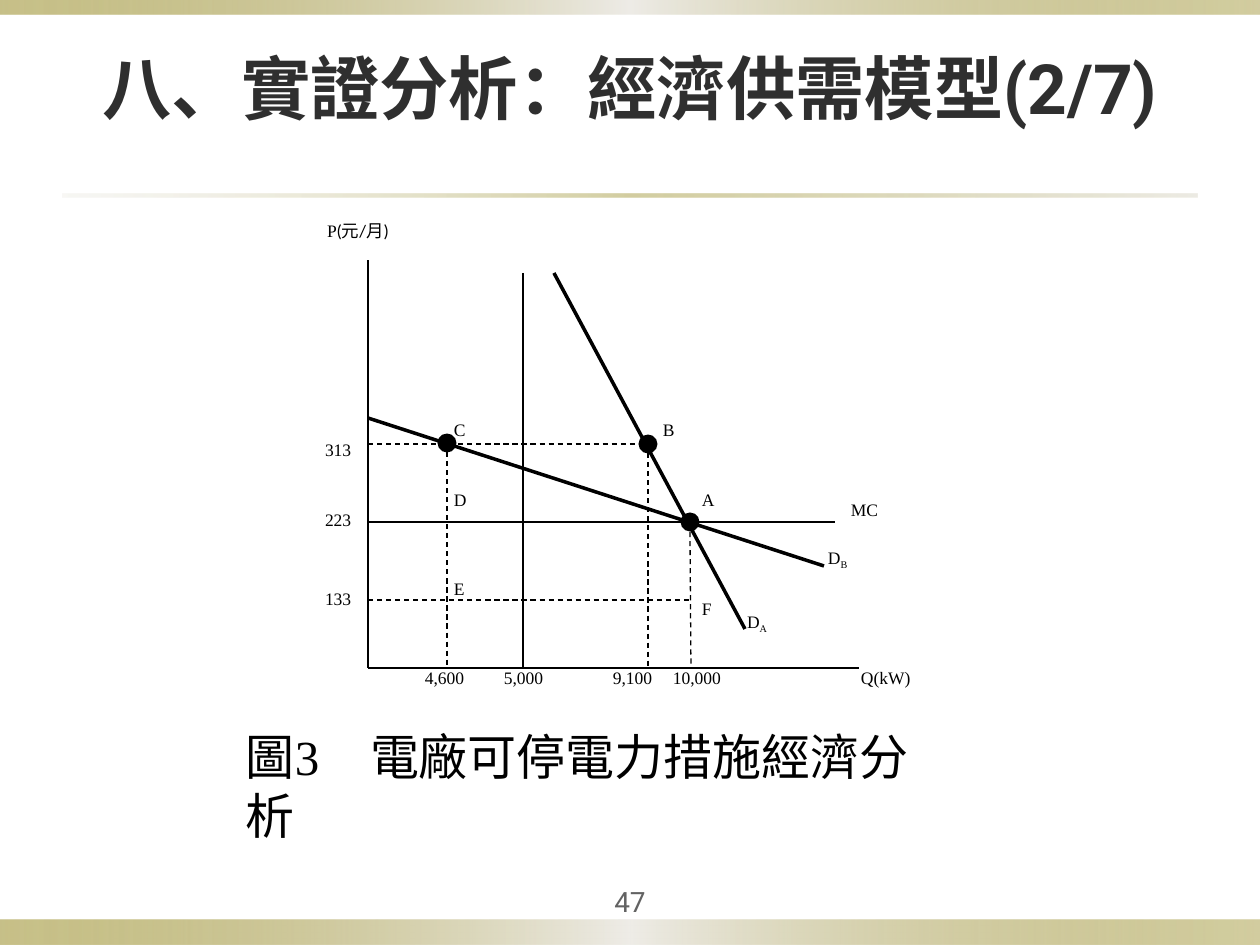
from lxml import etree
from pptx import Presentation
from pptx.dml.color import RGBColor
from pptx.enum.dml import MSO_LINE
from pptx.enum.shapes import MSO_CONNECTOR, MSO_SHAPE
from pptx.enum.text import MSO_ANCHOR, PP_ALIGN
from pptx.oxml.ns import qn
from pptx.util import Pt

STRAIGHT = MSO_CONNECTOR.STRAIGHT
RECTANGLE, OVAL = MSO_SHAPE.RECTANGLE, MSO_SHAPE.OVAL
DASH = MSO_LINE.DASH
LEFT, CENTER = PP_ALIGN.LEFT, PP_ALIGN.CENTER
TOP, MIDDLE = MSO_ANCHOR.TOP, MSO_ANCHOR.MIDDLE

THEME = {
    "ink": "000000", "title": "2F2F2F", "number": "626262",
    "gold": "918415", "silver": "EEECE7", "sand": "DBD8CA",
    "heading_font": "Roboto", "body_font": "Times New Roman",
    "title_size": 39.6, "caption_size": 28, "number_size": 16, "label_size": 10,
    "thin": 0.75, "axis": 1.25, "curve": 2,
}

# Content; all lengths in px, 126 to the inch
SLIDE_SIZE = (1260, 945)
TITLE = "八、實證分析：經濟供需模型(2/7)"
CAPTION = "圖3\t電廠可停電力措施經濟分析"
CAPTION_TAB = 124
PAGE_NUMBER = "47"

BAND = [(0, "gold", 50), (50, "silver", 100), (100, "gold", 40)]
RULE = [(0, "sand", 20), (50, "gold", 40), (100, "sand", 50)]
BARS = [((0, 920, 1260, 25), BAND), ((0, 0, 1260, 15), BAND), ((63, 194, 1134, 3), RULE)]

ORIGIN_X, ORIGIN_Y = 368, 668
PRICES = {"313": 444, "223": 522, "133": 600}
QUANTITIES = {"4,600": 447, "5,000": 523, "9,100": 648, "10,000": 691}
POINTS = {"A": (690, 522), "B": (648, 444), "C": (447, 443)}
DOT = 19

# from, to, weight, dashed
LINES = [
    ((ORIGIN_X, ORIGIN_Y), (859, ORIGIN_Y), "axis", False),
    ((ORIGIN_X, ORIGIN_Y), (ORIGIN_X, 260), "axis", False),
    ((ORIGIN_X, PRICES["223"]), (835, PRICES["223"]), "axis", False),
    ((554, 273), (745, 629), "curve", False),
    ((ORIGIN_X, 418), (824, 566), "curve", False),
    ((QUANTITIES["5,000"], 273), (QUANTITIES["5,000"], ORIGIN_Y), "thin", False),
    ((ORIGIN_X, PRICES["313"]), POINTS["B"], "thin", True),
    ((ORIGIN_X, PRICES["133"]), (QUANTITIES["10,000"], PRICES["133"]), "thin", True),
    ((QUANTITIES["4,600"], 452), (QUANTITIES["4,600"], ORIGIN_Y), "thin", True),
    (POINTS["B"], (QUANTITIES["9,100"], ORIGIN_Y), "thin", True),
    ((690, 532), (QUANTITIES["10,000"], ORIGIN_Y), "thin", True),
]

# box, runs; a run is text with its own format
LABELS = [
    ((314, 214, 117, 59), [("P", {}), ("(", {"name": "Calibri"}), ("元", {"name": "Arial"}),
                           ("/", {"name": "Calibri"}), ("月", {"name": "Arial"}),
                           (")", {"name": "Calibri"})]),
    ((838, 493, 81, 40), [("MC", {})]),
    ((815, 541, 72, 50), [("D", {}), ("B", {"subscript": True})]),
    ((734, 605, 71, 50), [("D", {}), ("A", {"subscript": True})]),
    ((848, 661, 101, 49), [("Q(kW)", {})]),
]
LABELS += [((312, top, 72, 50), [(price, {})])
           for price, top in zip(PRICES, (433, 503, 582))]
LABELS += [((left, 661, 100, 47), [(quantity, {})])
           for quantity, left in zip(QUANTITIES, (412, 491, 600, 660))]
LABELS += [((left, top, 43, 50), [(letter, {})]) for letter, left, top in [
    ("A", 689, 483), ("B", 650, 413), ("C", 441, 413),
    ("D", 441, 483), ("E", 441, 572), ("F", 689, 592)]]


def px(length):
    return round(length * 914400 / 126)


def color(name):
    return RGBColor.from_string(THEME[name])


def apply(target, values):
    for name, value in values.items():
        setattr(target, name, value)


def font_values(size, ink="ink", family="body_font", bold=False):
    return {"name": THEME[family], "size": Pt(THEME[size]), "bold": bold, "ink": ink}


def write(shape, runs, font, align=LEFT, anchor=TOP, inset=13, tab=None):
    frame = shape.text_frame
    apply(frame, {"word_wrap": True, "vertical_anchor": anchor,
                  "margin_left": px(inset), "margin_right": px(inset),
                  "margin_top": px(6), "margin_bottom": px(6)})
    paragraph = frame.paragraphs[0]
    paragraph.alignment = align
    if tab:
        tabs = etree.SubElement(paragraph._p.get_or_add_pPr(), qn("a:tabLst"))
        etree.SubElement(tabs, qn("a:tab"), pos=str(px(tab)), algn="l")
    for text, own_format in runs:
        run = paragraph.add_run()
        run.text = text
        values = {**font, **own_format}
        run.font.color.rgb = color(values.pop("ink"))
        if values.pop("subscript", False):
            run._r.get_or_add_rPr().set("baseline", "-25000")
        apply(run.font, values)


def add_text(slide, box, runs, font, **layout):
    write(slide.shapes.add_textbox(*map(px, box)), runs, font, **layout)


def add_plain_shape(slide, kind, box):
    shape = slide.shapes.add_shape(kind, *map(px, box))
    shape.shadow.inherit = False
    shape.line.fill.background()
    return shape


def add_bar(slide, box, stops):
    """Add a rectangle with a left-to-right gradient of part-transparent stops."""
    fill = add_plain_shape(slide, RECTANGLE, box).fill
    fill.gradient()
    fill.gradient_angle = 0
    stop_list = fill.gradient_stops[0]._gs.getparent()
    for old_stop in list(stop_list):
        stop_list.remove(old_stop)
    for position, name, opacity in stops:
        stop = etree.SubElement(stop_list, qn("a:gs"), pos=str(position * 1000))
        stop_color = etree.SubElement(stop, qn("a:srgbClr"), val=THEME[name])
        etree.SubElement(stop_color, qn("a:alpha"), val=str(opacity * 1000))


def add_line(slide, start, end, weight, dashed):
    connector = slide.shapes.add_connector(STRAIGHT, *map(px, start + end))
    connector.line.color.rgb = color("ink")
    connector.line.width = Pt(THEME[weight])
    if dashed:
        connector.line.dash_style = DASH
    etree.SubElement(connector._element.spPr, qn("a:effectLst"))


def add_dot(slide, center):
    x, y = center
    dot = add_plain_shape(slide, OVAL, (x - DOT / 2, y - DOT / 2, DOT, DOT))
    dot.fill.solid()
    dot.fill.fore_color.rgb = color("ink")


def main():
    presentation = Presentation()
    presentation.slide_width, presentation.slide_height = map(px, SLIDE_SIZE)
    slide = presentation.slides.add_slide(presentation.slide_layouts[5])

    for box, stops in BARS:
        add_bar(slide, box, stops)

    title = slide.shapes.title
    apply(title, dict(zip(("left", "top", "width", "height"), map(px, (63, 38, 1134, 97)))))
    write(title, [(TITLE, {})], font_values("title_size", "title", "heading_font", True),
          align=CENTER, anchor=MIDDLE)

    for line in LINES:
        add_line(slide, *line)
    for center in POINTS.values():
        add_dot(slide, center)
    for box, runs in LABELS:
        add_text(slide, box, runs, font_values("label_size"))

    add_text(slide, (233, 721, 735, 84), [(CAPTION, {})], font_values("caption_size"),
             tab=CAPTION_TAB)
    add_text(slide, (567, 882, 126, 39), [(PAGE_NUMBER, {})],
             font_values("number_size", "number", "heading_font"),
             align=CENTER, anchor=MIDDLE, inset=6)
    presentation.save("out.pptx")


if __name__ == "__main__":
    main()
